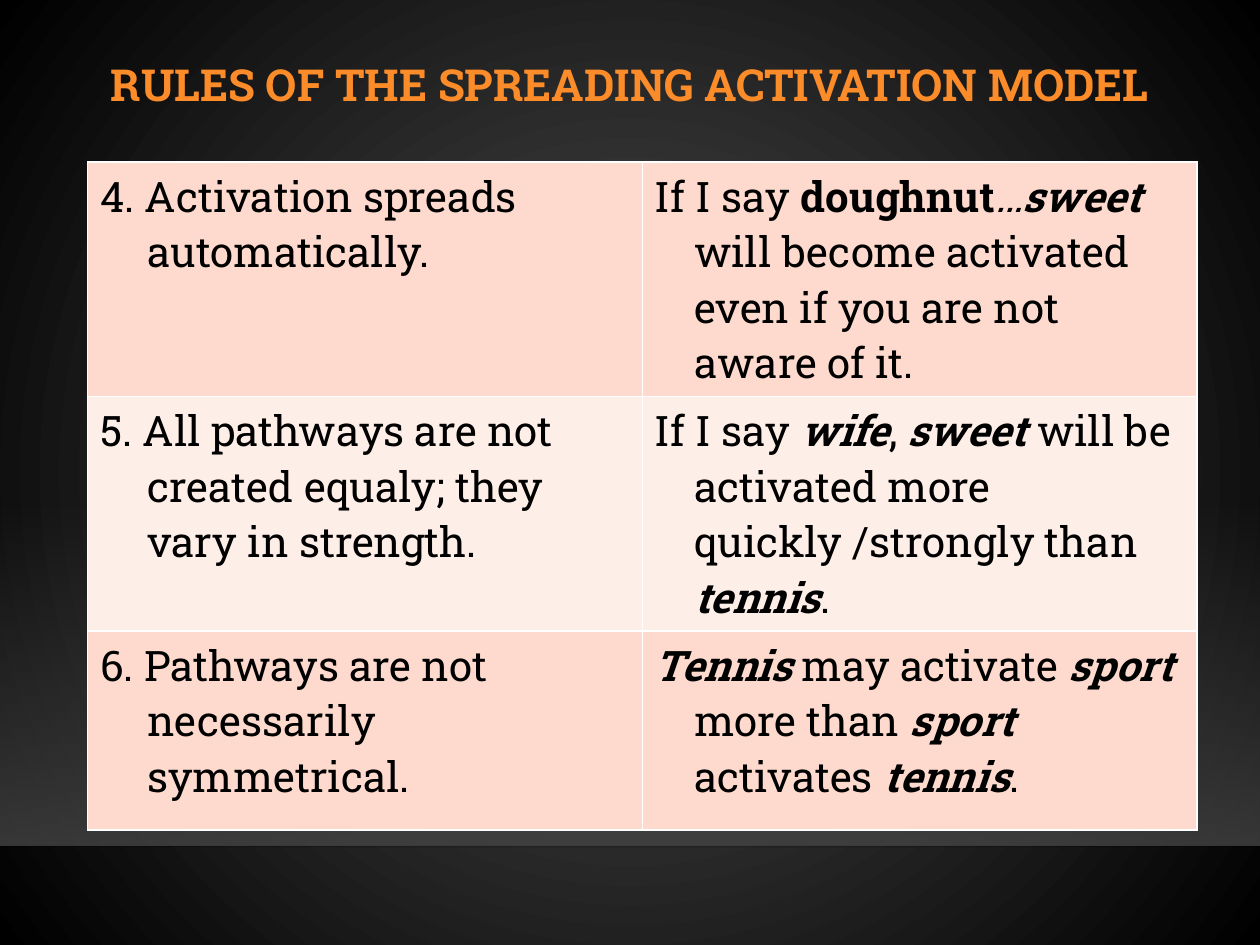
from lxml import etree
from pptx import Presentation
from pptx.dml.color import RGBColor
from pptx.enum.shapes import MSO_CONNECTOR, MSO_SHAPE
from pptx.enum.text import MSO_ANCHOR, PP_ALIGN
from pptx.oxml.ns import qn
from pptx.util import Pt

RECTANGLE = MSO_SHAPE.RECTANGLE
STRAIGHT = MSO_CONNECTOR.STRAIGHT
MIDDLE = MSO_ANCHOR.MIDDLE
CENTER = PP_ALIGN.CENTER

FONT = "Roboto Slab"
COLORS = {
    "glow": "505050", "edge": "000000", "floor": "454545", "horizon": "000001",
    "title": "FB8C29", "text": "000000", "border": "FFFFFF",
    "band_dark": "FDDACD", "band_light": "FEEEE8",
}
PLAIN, BOLD, ITALIC, STRONG = (False, False), (True, False), (False, True), (True, True)

TITLE = "RULES OF THE SPREADING ACTIVATION MODEL"
# Each rule: statement, then its example as (text, (bold, italic)) runs
RULES = [
    ("4. Activation spreads automatically.",
     [("If I say ", PLAIN), ("doughnut", BOLD), ("…", ITALIC), ("sweet", STRONG),
      (" will become activated even if you are not aware of it.", PLAIN)]),
    ("5. All pathways are not created equaly; they vary in strength.",
     [("If I say ", PLAIN), ("wife", STRONG), (", ", PLAIN), ("sweet", STRONG),
      (" will be activated more quickly /strongly than ", PLAIN),
      ("tennis", STRONG), (".", PLAIN)]),
    ("6. Pathways are not necessarily symmetrical.",
     [("Tennis", STRONG), (" may activate ", PLAIN), ("sport", STRONG),
      (" more than ", PLAIN), ("sport", STRONG), (" activates ", PLAIN),
      ("tennis", STRONG), (".", PLAIN)]),
]
ROW_HEIGHTS = [134, 134, 113.8]
STATEMENT_INDENT, EXAMPLE_INDENT = 27, 22.5


def rgb(name):
    return RGBColor.from_string(COLORS[name])


def add_color(parent, name, alpha=100):
    color = etree.SubElement(parent, qn("a:srgbClr"), val=COLORS[name])
    if alpha < 100:
        etree.SubElement(color, qn("a:alpha"), val=str(alpha * 1000))


def set_gradient(gradient, stops):
    """Replace the stops with (position, colour, opacity) and drop the direction."""
    for child in list(gradient):
        gradient.remove(child)
    stop_list = etree.SubElement(gradient, qn("a:gsLst"))
    for position, name, alpha in stops:
        stop = etree.SubElement(stop_list, qn("a:gs"), pos=str(position * 1000))
        add_color(stop, name, alpha)


def add_run(paragraph, text, size, color, style):
    run = paragraph.add_run()
    run.text = text
    font = run.font
    font.name, font.size = FONT, Pt(size)
    font.bold, font.italic = style
    font.color.rgb = rgb(color)


def draw_backdrop(slide, left, top, width, height):
    # Radial glow behind everything
    slide.background.fill.gradient()
    glow = slide.element.find(".//" + qn("p:bg")).find(".//" + qn("a:gradFill"))
    set_gradient(glow, [(0, "glow", 100), (100, "edge", 100)])
    circle = etree.SubElement(glow, qn("a:path"), path="circle")
    etree.SubElement(circle, qn("a:fillToRect"), l="50000", t="50000", r="50000", b="50000")

    # Floor that fades in downwards
    floor_top, floor_height = top + 285.2, 198
    floor = slide.shapes.add_shape(RECTANGLE, Pt(left), Pt(floor_top), Pt(width), Pt(floor_height))
    floor.shadow.inherit = False
    floor.line.fill.background()
    floor.fill.gradient()
    fade = floor.element.spPr.find(qn("a:gradFill"))
    set_gradient(fade, [(0, "floor", 0), (100, "floor", 80)])
    etree.SubElement(fade, qn("a:lin"), ang="5400000", scaled="0")

    # Faint horizon line
    horizon_y = Pt(floor_top + floor_height + 0.6)
    horizon = slide.shapes.add_connector(STRAIGHT, Pt(left), horizon_y, Pt(left + width), horizon_y)
    horizon.line.width = Pt(1)
    horizon.line.color.rgb = rgb("horizon")
    line_color = horizon.element.spPr.find(".//" + qn("a:srgbClr"))
    etree.SubElement(line_color, qn("a:alpha"), val="20000")
    etree.SubElement(horizon.element.spPr, qn("a:effectLst"))


def draw_title(slide, left, top, width, height):
    title = slide.shapes.add_textbox(Pt(left), Pt(top), Pt(width), Pt(height))
    frame = title.text_frame
    frame.word_wrap = True
    frame.vertical_anchor = MIDDLE
    paragraph = frame.paragraphs[0]
    paragraph.alignment = CENTER
    paragraph.line_spacing = 0.9
    add_run(paragraph, TITLE, 25.2, "title", BOLD)


def fill_cell(cell, runs, indent, band):
    properties = cell._tc.get_or_add_tcPr()
    for side in ("a:lnL", "a:lnR", "a:lnT", "a:lnB"):
        border = etree.SubElement(properties, qn(side), w=str(Pt(1)))
        add_color(etree.SubElement(border, qn("a:solidFill")), "border")
    cell.fill.solid()
    cell.fill.fore_color.rgb = rgb(band)
    paragraph = cell.text_frame.paragraphs[0]
    hanging = paragraph._p.get_or_add_pPr()
    hanging.set("marL", str(Pt(indent)))
    hanging.set("indent", str(-Pt(indent)))
    for text, style in runs:
        add_run(paragraph, text, 24, "text", style)


def draw_rules(slide, left, top, width, height):
    table = slide.shapes.add_table(len(RULES), 2, Pt(left), Pt(top), Pt(width), Pt(height)).table
    table.first_row = table.horz_banding = False
    for column in table.columns:
        column.width = Pt(width / 2)
    for index, (statement, example) in enumerate(RULES):
        table.rows[index].height = Pt(ROW_HEIGHTS[index])
        band = "band_light" if index % 2 else "band_dark"
        fill_cell(table.cell(index, 0), [(statement, PLAIN)], STATEMENT_INDENT, band)
        fill_cell(table.cell(index, 1), example, EXAMPLE_INDENT, band)


def main():
    deck = Presentation()
    deck.slide_width, deck.slide_height = Pt(720), Pt(540)
    slide = deck.slides.add_slide(deck.slide_layouts[6])
    draw_backdrop(slide, 0, 0, 720, 540)
    draw_title(slide, 36, 21.6, 648, 56.2)
    draw_rules(slide, 50, 92.6, 634, sum(ROW_HEIGHTS))
    deck.save("out.pptx")


if __name__ == "__main__":
    main()
